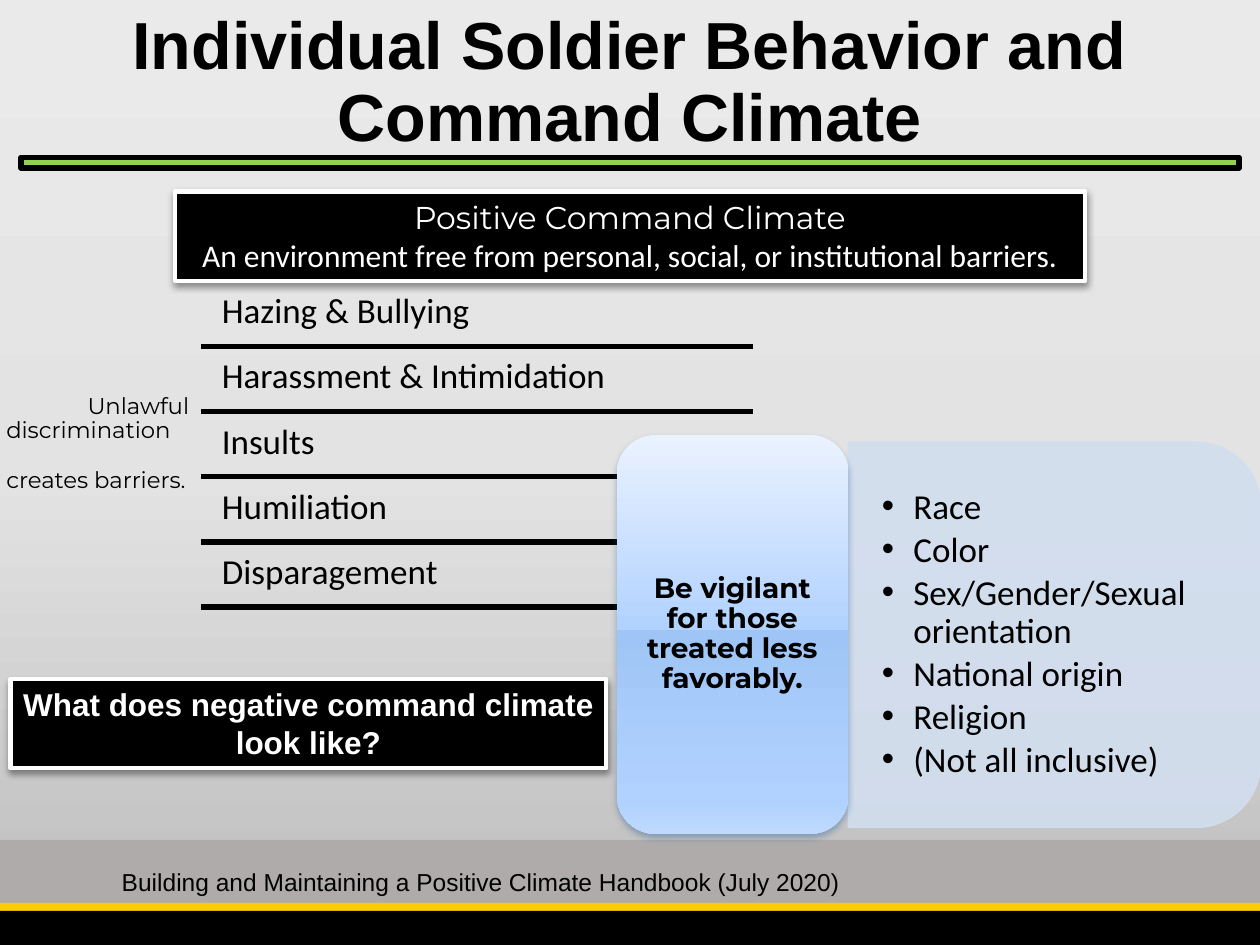
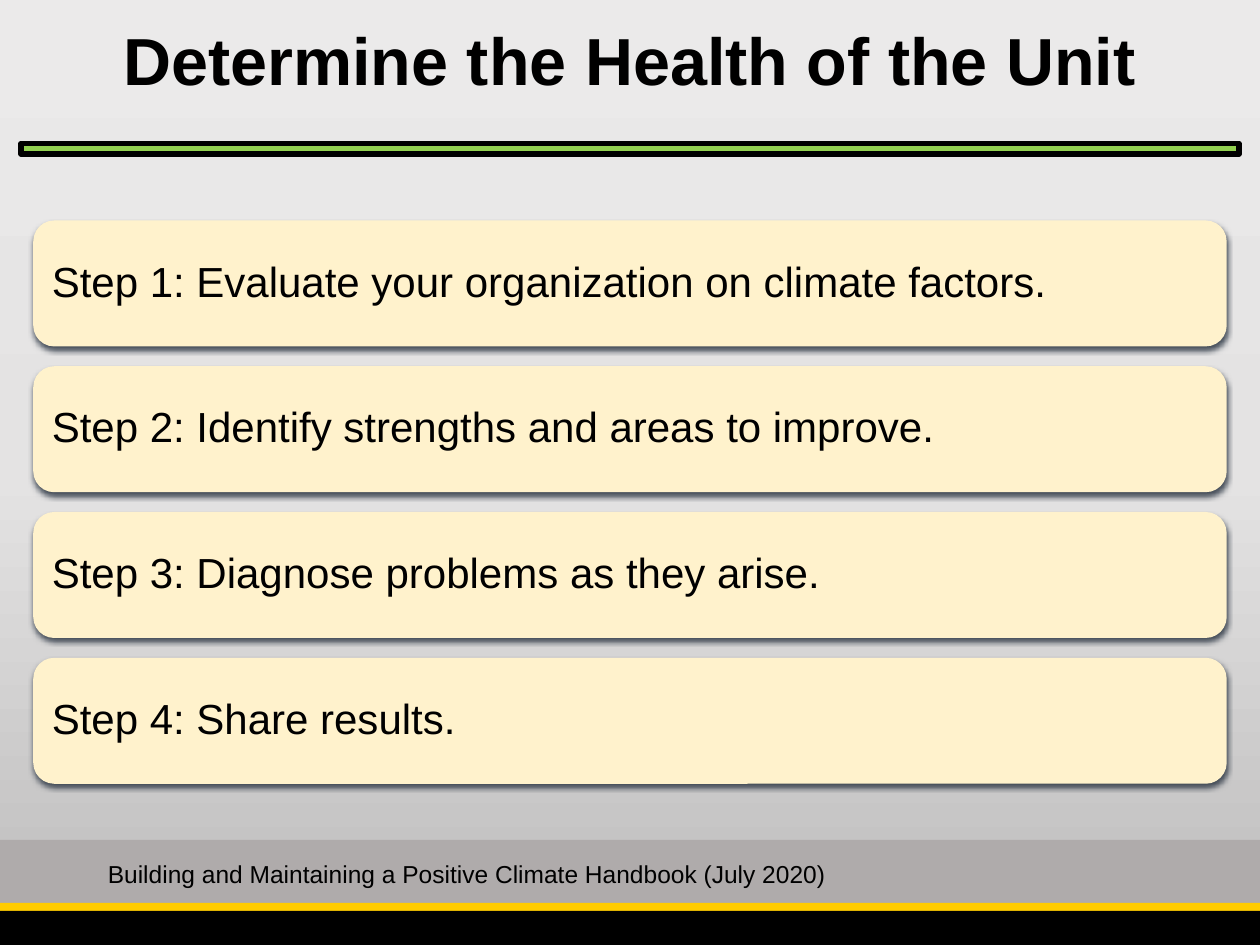
"""Build two slides on command climate and unit health."""
from dataclasses import dataclass
from typing import NamedTuple

import lxml.etree
import pptx
import pptx.dml.color
import pptx.enum.shapes
import pptx.enum.text
import pptx.oxml.ns
import pptx.util

Pt = pptx.util.Pt
qn = pptx.oxml.ns.qn
KIND = pptx.enum.shapes.MSO_SHAPE
ALIGN = pptx.enum.text.PP_ALIGN
ANCHOR = pptx.enum.text.MSO_ANCHOR

BLACK, WHITE, GRAY = "000000", "FFFFFF", "AFABAB"
GOLD, GREEN, CREAM, PALE = "FFCC00", "92D050", "FFF2CC", "D2DEEF"
WIDE, HIGH = 720, 540
RULE = 3.15
BACK = [(0, "EBEAEA"), (50, "E4E3E3"), (100, "BDBCBC")]
GLOSS = [(0, "EAF2FF"), (49, "B1D2FF"), (49, "9FC5F6"), (92, "B1D2FF"), (100, "BFD9FD")]
SOURCE = "Building and Maintaining a Positive Climate Handbook (July 2020)"
BARS = ["Hazing & Bullying", "Harassment & Intimidation", "Insults", "Humiliation", "Disparagement"]
TRAITS = ["Race", "Color", "Sex/Gender/Sexual orientation", "National origin", "Religion",
          "(Not all inclusive)"]
STEPS = ["Evaluate your organization on climate factors.", "Identify strengths and areas to improve.",
         "Diagnose problems as they arise.", "Share results."]


class Area(NamedTuple):
    """Place and size in points."""
    x: float
    y: float
    w: float
    h: float


class Shade(NamedTuple):
    """Drop shadow that falls straight down."""
    color: str
    alpha: int
    blur: float
    drop: float


@dataclass(frozen=True)
class Style:
    """Look of the text in one box."""
    size: float
    font: str = "Arial"
    color: str = BLACK
    bold: bool = False
    align: ALIGN = ALIGN.LEFT
    anchor: ANCHOR = ANCHOR.TOP
    pad: tuple[float, float] = (7.2, 3.6)
    lead: float = 0.9
    after: float = 0
    dots: bool = False


TITLE = Style(38, bold=True, align=ALIGN.CENTER, anchor=ANCHOR.MIDDLE)
FOOT = Style(14, lead=1)
LABEL = Style(18, color=WHITE, bold=True, align=ALIGN.CENTER, lead=1)
ROW = Style(20, "Calibri", pad=(5.76, 5.76))
SIDE = Style(13, "Montserrat", pad=(3.6, 3.6))
ALERT = Style(16, "Montserrat", bold=True, align=ALIGN.CENTER, anchor=ANCHOR.MIDDLE, pad=(5, 2.2))
LIST = Style(20, "Calibri", anchor=ANCHOR.MIDDLE, pad=(19.44, 10), after=3, dots=True)
STEP = Style(24, anchor=ANCHOR.MIDDLE, pad=(7.2, 7.2))
SOFT = Shade(BLACK, 38, 4, 2)
BLUE = Shade("245D90", 38, 4, 2)
DEEP = Shade("2A3441", 83, 3.1, 2)


def rgb(code: str) -> pptx.dml.color.RGBColor:
    """Turn a hex string into a colour."""
    return pptx.dml.color.RGBColor.from_string(code)


def place(area: Area) -> list[int]:
    """Turn an area into lengths."""
    return [Pt(side) for side in area]


def add(root, tag: str, **attrs):
    """Add a child element with attributes."""
    return lxml.etree.SubElement(root, qn(tag), {key: str(val) for key, val in attrs.items()})


def blend(fill, root, stops: list[tuple[int, str]]) -> None:
    """Fill with a gradient that runs from top to bottom."""
    fill.gradient()
    fill.gradient_angle = 270
    group = next(root.iter(qn("a:gsLst")))
    for old in list(group):
        group.remove(old)
    for spot, code in stops:
        add(add(group, "a:gs", pos=spot * 1000), "a:srgbClr", val=code)


def write(shape, lines: list[str], style: Style) -> None:
    """Put styled lines of text in a shape."""
    frame = shape.text_frame
    frame.word_wrap = True
    frame.vertical_anchor = style.anchor
    frame.margin_left = frame.margin_right = Pt(style.pad[0])
    frame.margin_top = frame.margin_bottom = Pt(style.pad[1])
    frame.text = "\n".join(lines)
    for para in frame.paragraphs:
        para.alignment = style.align
        para.line_spacing = style.lead
        para.space_after = Pt(style.after)
        if style.dots:
            props = para._p.get_or_add_pPr()
            props.set("marL", str(Pt(18)))
            props.set("indent", str(-Pt(18)))
            add(props, "a:buFont", typeface="Arial")
            add(props, "a:buChar", char="•")
        for run in para.runs:
            font = run.font
            font.size, font.name, font.bold = Pt(style.size), style.font, style.bold
            font.color.rgb = rgb(style.color)


def text(slide, area: Area, lines: list[str], style: Style):
    """Add a text box."""
    box = slide.shapes.add_textbox(*place(area))
    write(box, lines, style)
    return box


def block(slide, area: Area, color: str, kind: KIND = KIND.RECTANGLE,
          edge: tuple[str, float] | None = None, shade: Shade | None = None):
    """Add a filled shape with an optional edge and shadow."""
    shape = slide.shapes.add_shape(kind, *place(area))
    shape.shadow.inherit = False
    shape.fill.solid()
    shape.fill.fore_color.rgb = rgb(color)
    if edge:
        shape.line.color.rgb = rgb(edge[0])
        shape.line.width = Pt(edge[1])
    else:
        shape.line.fill.background()
    if shade:
        group = next(shape.element.iter(qn("a:effectLst")))
        cast = add(group, "a:outerShdw", blurRad=Pt(shade.blur), dist=Pt(shade.drop),
                   dir=5400000, rotWithShape=0)
        add(add(cast, "a:srgbClr", val=shade.color), "a:alpha", val=shade.alpha * 1000)
    return shape


def banner(slide, area: Area, lines: list[str]):
    """Add a black box with a white edge."""
    shape = block(slide, area, BLACK, edge=(WHITE, 2.5), shade=SOFT)
    write(shape, lines, LABEL)
    return shape


def start(deck, title: str, head: Area, rule: float, foot: Area):
    """Add a slide with the shared backdrop, title, rule and footer."""
    slide = deck.slides.add_slide(deck.slide_layouts[6])
    blend(slide.background.fill, slide.element, BACK)
    for top, tall, color in [(480, 36.5, GRAY), (516, 4.5, GOLD), (520.5, 19.5, BLACK)]:
        block(slide, Area(0, top, WIDE, tall), color)
    block(slide, Area(12, rule, 696, 6), GREEN, edge=(BLACK, RULE))
    text(slide, head, [title], TITLE)
    text(slide, foot, [SOURCE], FOOT)
    return slide


def climate(deck) -> None:
    """Draw the slide on behavior and climate."""
    slide = start(deck, "Individual Soldier Behavior and Command Climate",
                  Area(0, 12, WIDE, 72), 90, Area(62.5, 492, 557, 24.5))
    top = banner(slide, Area(100, 109.5, 520, 51), [
        "Positive Command Climate",
        "An environment free from personal, social, or institutional barriers."])
    for para, face in zip(top.text_frame.paragraphs, ["Montserrat", "Calibri"]):
        para.runs[0].font.name = face
        para.runs[0].font.bold = False

    side = text(slide, Area(0, 222, 115, 66), ["Unlawful", "discrimination", "creates barriers."], SIDE)
    side.text_frame.margin_right = Pt(7)
    first, _, last = side.text_frame.paragraphs
    first.alignment = ALIGN.RIGHT
    last.space_before = Pt(14)

    for num, name in enumerate(BARS):
        drop = num * 37.2
        text(slide, Area(121, 162 + drop, 309, 35), [name], ROW)
        line = slide.shapes.add_connector(pptx.enum.shapes.MSO_CONNECTOR.STRAIGHT,
                                          Pt(115), Pt(198 + drop), Pt(430.5), Pt(198 + drop))
        line.line.color.rgb = rgb(BLACK)
        line.line.width = Pt(RULE)
        add(line.element.spPr, "a:effectLst")

    panel = block(slide, Area(492.5, 245, 220, 235.5), PALE, KIND.ROUND_2_SAME_RECTANGLE, (PALE, 0.9))
    panel.rotation = 90
    for color in panel.element.spPr.iter(qn("a:srgbClr")):
        add(color, "a:alpha", val=90000)
    text(slide, Area(484.5, 263, 225, 199), TRAITS, LIST)

    card = block(slide, Area(352.5, 248.5, 132.5, 228), PALE, KIND.ROUNDED_RECTANGLE, shade=BLUE)
    blend(card.fill, card.element, GLOSS)
    text(slide, Area(358.5, 255, 120, 215), ["Be vigilant for those treated less favorably."], ALERT)
    banner(slide, Area(6, 388, 340.5, 51), ["What does negative command climate look like?"])


def health(deck) -> None:
    """Draw the slide on the health of the unit."""
    slide = start(deck, "Determine the Health of the Unit",
                  Area(12, 0, 696, 73), 82, Area(54.5, 487.5, 577, 24.5))
    for num, task in enumerate(STEPS):
        top = 126 + num * 83.3
        block(slide, Area(19, top, 682, 72), CREAM, KIND.ROUNDED_RECTANGLE, shade=DEEP)
        text(slide, Area(22.5, top + 3.5, 675, 65), [f"Step {num + 1}: {task}"], STEP)


def main() -> None:
    """Build and save the deck."""
    deck = pptx.Presentation()
    deck.slide_width, deck.slide_height = Pt(WIDE), Pt(HIGH)
    climate(deck)
    health(deck)
    deck.save("out.pptx")


if __name__ == "__main__":
    main()
